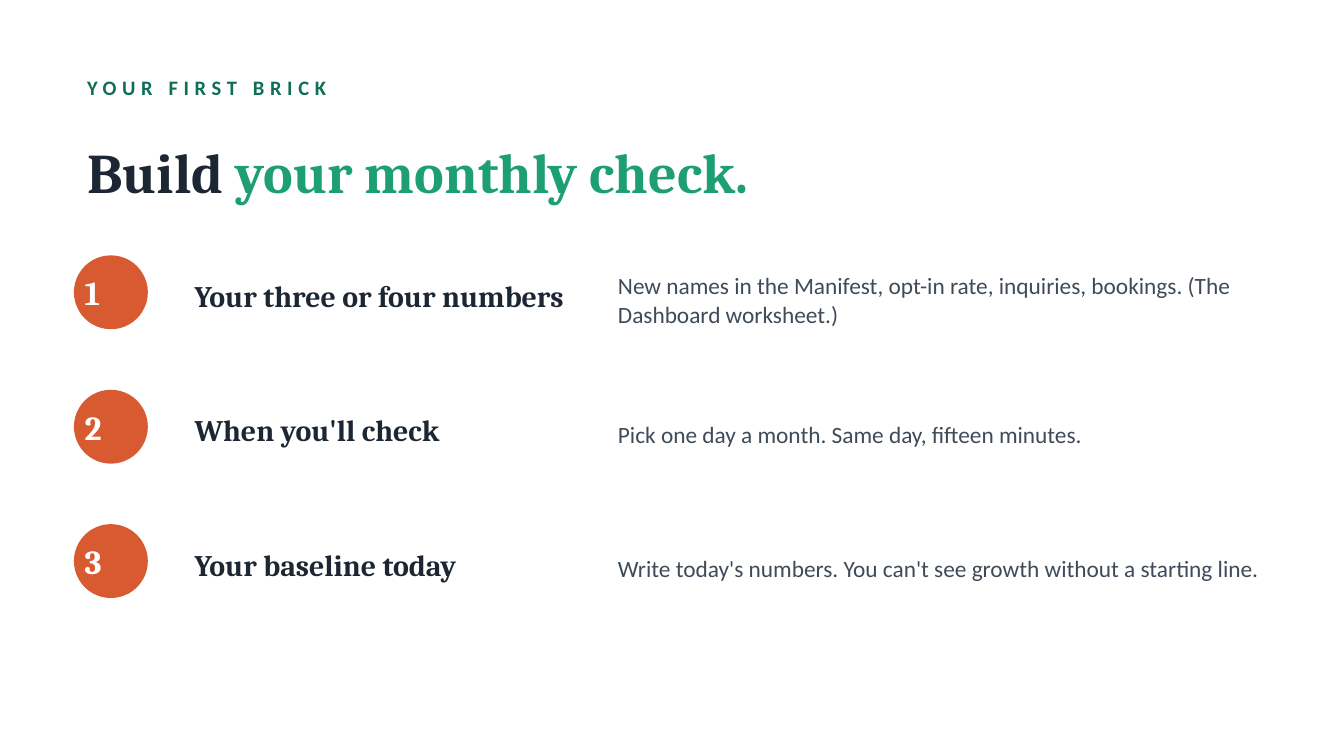
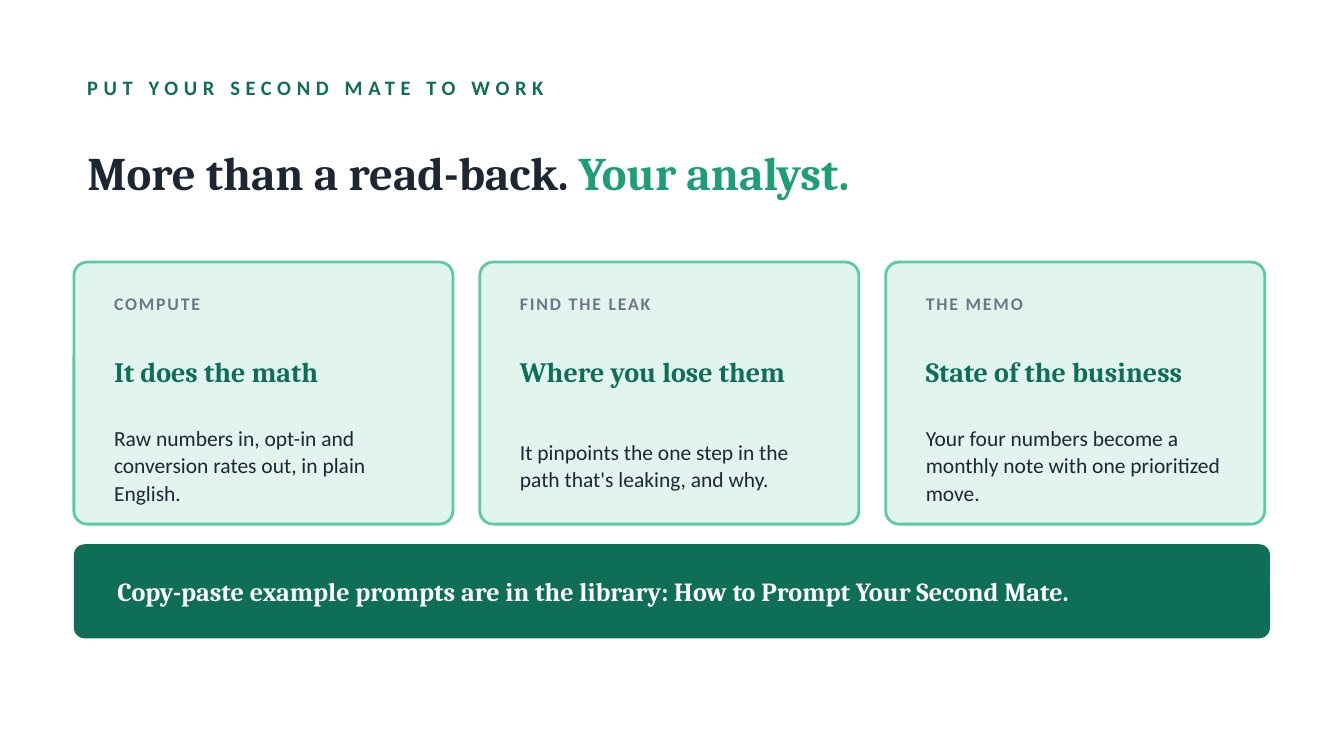
from pptx import Presentation
from pptx.dml.color import RGBColor
from pptx.enum.shapes import MSO_SHAPE
from pptx.enum.text import MSO_ANCHOR, MSO_AUTO_SIZE, PP_ALIGN
from pptx.util import Inches, Pt

SERIF, SANS = "Cambria", "Calibri"
INK, SLATE, GREY, WHITE = "1C2733", "3F4B59", "6B7785", "FFFFFF"
PINE, GREEN, MINT, PALE = "0F6E56", "1D9E75", "5DCAA5", "E1F5EE"
RUST = "D85A30"
LEFT, WIDE = 0.55, 8.9


def color(code):
    return RGBColor.from_string(code)


class Deck:
    def __init__(self):
        self.prs = Presentation()
        self.prs.slide_width = Inches(10)
        self.prs.slide_height = Inches(10) * 9 // 16
        self.slide = None

    def style(self, run, size, code, font=SERIF, bold=True, track=0):
        run.font.size = Pt(size)
        run.font.name = font
        run.font.bold = bold
        run.font.color.rgb = color(code)
        if track:
            run.font._element.set("spc", str(track * 100))

    def frame(self, shape, align=PP_ALIGN.LEFT):
        frame = shape.text_frame
        frame.word_wrap = True
        frame.auto_size = MSO_AUTO_SIZE.NONE
        frame.vertical_anchor = MSO_ANCHOR.MIDDLE
        frame.paragraphs[0].alignment = align
        return frame

    def text(self, words, x, y, w, h, size, code, lead=None, **look):
        box = self.slide.shapes.add_textbox(
            Inches(x), Inches(y), Inches(w), Inches(h))
        frame = self.frame(box)
        frame.text = words
        para = frame.paragraphs[0]
        if lead:
            para.line_spacing = lead
        self.style(para.runs[0], size, code, **look)

    def shape(self, kind, x, y, w, h, fill, edge=None, round=None):
        shape = self.slide.shapes.add_shape(
            kind, Inches(x), Inches(y), Inches(w), Inches(h))
        shape.shadow.inherit = False
        shape.fill.solid()
        shape.fill.fore_color.rgb = color(fill)
        if edge:
            shape.line.color.rgb = color(edge)
            shape.line.width = Pt(1.5)
        else:
            shape.line.fill.background()
        if round:
            # Corner radius in inches
            shape.adjustments[0] = round / min(w, h)
        return shape

    def label(self, shape, words, size, inset):
        frame = self.frame(shape, PP_ALIGN.CENTER)
        frame.margin_left = frame.margin_right = Inches(inset)
        frame.text = words
        self.style(frame.paragraphs[0].runs[0], size, WHITE)

    def start(self, kicker, head, accent, size):
        self.slide = self.prs.slides.add_slide(self.prs.slide_layouts[5])
        self.slide.background.fill.solid()
        self.slide.background.fill.fore_color.rgb = color(WHITE)
        self.text(kicker, LEFT, 0.5, WIDE, 0.3, 11, PINE, font=SANS, track=3)
        title = self.slide.shapes.title
        title.left, title.top = Inches(LEFT), Inches(0.85)
        title.width, title.height = Inches(WIDE), Inches(0.85)
        para = self.frame(title).paragraphs[0]
        for words, code in ((head, INK), (accent, GREEN)):
            run = para.add_run()
            run.text = words
            self.style(run, size, code)

    def step(self, num, name, note):
        y = 0.9 + num
        disc = self.shape(MSO_SHAPE.OVAL, LEFT, y, 0.55, 0.55, RUST)
        self.label(disc, str(num), 18, 0)
        self.text(name, 1.35, y - 0.05, 3, 0.7, 16, INK)
        self.text(note, 4.5, y - 0.05, 5, 0.75, 12.5, SLATE, lead=1.05,
                  font=SANS, bold=False)

    def card(self, col, tag, name, note):
        x, y = LEFT + col * 3.02, 1.95
        self.shape(MSO_SHAPE.ROUNDED_RECTANGLE, x, y, 2.82, 1.95, PALE,
                   edge=MINT, round=0.1)
        x += 0.2
        self.text(tag, x, y + 0.16, 2.45, 0.3, 9.5, GREY, font=SANS, track=1)
        self.text(name, x, y + 0.46, 2.45, 0.7, 15, PINE)
        self.text(note, x, y + 1.18, 2.45, 0.65, 11.5, INK, lead=1.08,
                  font=SANS, bold=False)

    def banner(self, words):
        bar = self.shape(MSO_SHAPE.ROUNDED_RECTANGLE, LEFT, 4.05, WIDE, 0.7,
                         PINE, round=0.08)
        self.label(bar, words, 14, 0.3)


def main():
    deck = Deck()

    # Monthly check: numbered steps
    deck.start("YOUR FIRST BRICK", "Build ", "your monthly check.", 30)
    steps = [
        ("Your three or four numbers",
         "New names in the Manifest, opt-in rate, inquiries, bookings. "
         "(The Dashboard worksheet.)"),
        ("When you'll check",
         "Pick one day a month. Same day, fifteen minutes."),
        ("Your baseline today",
         "Write today's numbers. You can't see growth without a starting line."),
    ]
    for num, (name, note) in enumerate(steps, 1):
        deck.step(num, name, note)

    # Second mate: cards and banner
    deck.start("PUT YOUR SECOND MATE TO WORK", "More than a read-back. ",
               "Your analyst.", 25)
    cards = [
        ("COMPUTE", "It does the math",
         "Raw numbers in, opt-in and conversion rates out, in plain English."),
        ("FIND THE LEAK", "Where you lose them",
         "It pinpoints the one step in the path that's leaking, and why."),
        ("THE MEMO", "State of the business",
         "Your four numbers become a monthly note with one prioritized move."),
    ]
    for col, (tag, name, note) in enumerate(cards):
        deck.card(col, tag, name, note)
    deck.banner("Copy-paste example prompts are in the library: "
                "How to Prompt Your Second Mate.")

    deck.prs.save("out.pptx")


if __name__ == "__main__":
    main()
